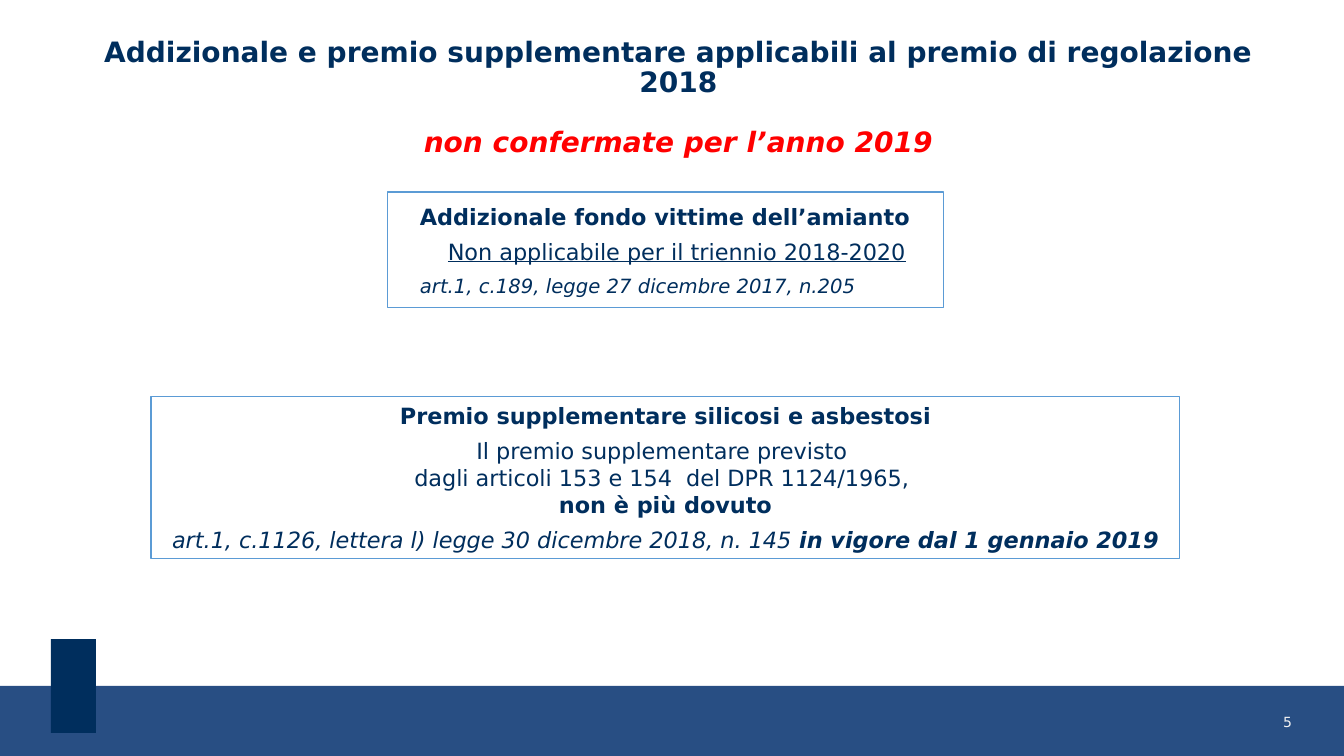
"""Build a slide on the additional and supplementary premiums for 2018."""
from dataclasses import dataclass

from pptx import Presentation
from pptx.dml.color import RGBColor
from pptx.enum.shapes import MSO_SHAPE
from pptx.enum.text import MSO_ANCHOR, PP_ALIGN
from pptx.util import Emu, Pt

RECTANGLE = MSO_SHAPE.RECTANGLE
TOP, MIDDLE = MSO_ANCHOR.TOP, MSO_ANCHOR.MIDDLE
LEFT, CENTER, RIGHT = PP_ALIGN.LEFT, PP_ALIGN.CENTER, PP_ALIGN.RIGHT
EMU_PER_PX = 914400 / 100.8


@dataclass(frozen=True)
class Theme:
    """Colours, font and type sizes of the slide."""
    font: str = "DejaVu Sans"
    navy: str = "002E5D"
    band: str = "284E83"
    border: str = "5B9BD5"
    alert: str = "FF0000"
    pale: str = "F2F2F2"
    title: int = 20
    body: int = 16
    citation: int = 14
    number: int = 10
    gap: int = 6


THEME = Theme()


def px(length):
    """Turn pixels into EMU."""
    return Emu(round(length * EMU_PER_PX))


def rgb(colour):
    """Turn a hex string into a colour."""
    return RGBColor.from_string(colour)


def add_block(slide, box, fill=None, border=None):
    """Add a rectangle with an optional fill and border."""
    block = slide.shapes.add_shape(RECTANGLE, *map(px, box))
    block.shadow.inherit = False
    if fill:
        block.fill.solid()
        block.fill.fore_color.rgb = rgb(fill)
    else:
        block.fill.background()
    if border:
        block.line.color.rgb = rgb(border)
        block.line.width = Pt(0.75)
    else:
        block.line.fill.background()
    return block


def prepare_frame(holder, anchor=TOP, inset=(10, 10), wrap=True):
    """Set the anchor, insets and wrapping of a text frame."""
    frame = holder.text_frame
    frame.word_wrap = wrap
    frame.vertical_anchor = anchor
    frame.margin_left = frame.margin_right = px(inset[0])
    frame.margin_top = frame.margin_bottom = px(inset[1])
    return frame


def add_text_area(slide, box, **layout):
    """Add a text box and return its frame."""
    return prepare_frame(slide.shapes.add_textbox(*map(px, box)), **layout)


def add_run(paragraph, text, size=THEME.body, colour=THEME.navy,
            bold=False, italic=False, underline=False):
    """Append formatted text to a paragraph."""
    run = paragraph.add_run()
    run.text = text
    font = run.font
    font.name, font.size = THEME.font, Pt(size)
    font.bold, font.italic, font.underline = bold, italic, underline
    font.color.rgb = rgb(colour)


def write(frame, text, align=CENTER, before=0, after=0, spacing=1.0,
          indent=0, **style):
    """Write one paragraph, reusing the empty first one, and return it."""
    first = frame.paragraphs[0]
    paragraph = frame.add_paragraph() if first.runs else first
    paragraph.alignment = align
    paragraph.space_before, paragraph.space_after = Pt(before), Pt(after)
    paragraph.line_spacing = spacing
    if indent:
        paragraph._p.get_or_add_pPr().set("marL", str(px(indent)))
    add_run(paragraph, text, **style)
    return paragraph


def add_title(slide):
    """Add the heading and its red remark."""
    title = add_text_area(slide, (51, 28, 1255, 120))
    style = {"size": THEME.title, "bold": True, "spacing": 0.9}
    write(title, "Addizionale e premio supplementare applicabili "
          "al premio di regolazione 2018", **style)
    write(title, "non confermate per l’anno 2019", before=21,
          colour=THEME.alert, italic=True, **style)


def add_asbestos_fund(slide):
    """Add the box on the asbestos victims fund."""
    box = add_block(slide, (388, 192, 556, 116), border=THEME.border)
    fund = prepare_frame(box, MIDDLE)
    write(fund, "Addizionale fondo vittime dell’amianto", LEFT,
          after=THEME.gap, indent=22, bold=True)
    write(fund, "Non applicabile per il triennio 2018-2020",
          after=THEME.gap, indent=22, underline=True)
    write(fund, "art.1, c.189, legge 27 dicembre 2017, n.205", LEFT,
          indent=22, size=THEME.citation, italic=True)


def add_silicosis_premium(slide):
    """Add the box on the silicosis and asbestosis premium."""
    box = add_block(slide, (151, 396, 1029, 163), border=THEME.border)
    premium = prepare_frame(box, MIDDLE, inset=(10, 5), wrap=False)
    write(premium, "Premio supplementare silicosi e asbestosi",
          after=THEME.gap, bold=True)
    write(premium, "Il premio supplementare previsto ")
    write(premium, "dagli articoli 153 e 154  del DPR 1124/1965, ")
    write(premium, "non è più dovuto", after=THEME.gap, bold=True)
    law = write(premium, "art.1, c.1126, lettera l) legge 30 dicembre 2018, "
                "n. 145 ", after=THEME.gap, italic=True)
    add_run(law, "in vigore dal 1 gennaio 2019", bold=True, italic=True)


def add_footer(slide):
    """Add the bottom band, its marker and the slide number."""
    add_block(slide, (0, 686, 1344, 70), fill=THEME.band)
    add_block(slide, (51, 639, 45, 94), fill=THEME.navy)
    number = add_text_area(slide, (1132, 714, 160, 40), inset=(0, 0))
    write(number, "5", RIGHT, size=THEME.number, colour=THEME.pale)


def main():
    """Build and save the slide."""
    deck = Presentation()
    deck.slide_width, deck.slide_height = px(1344), px(756)
    slide = deck.slides.add_slide(deck.slide_layouts[6])
    add_footer(slide)
    add_title(slide)
    add_silicosis_premium(slide)
    add_asbestos_fund(slide)
    deck.save("out.pptx")


if __name__ == "__main__":
    main()
